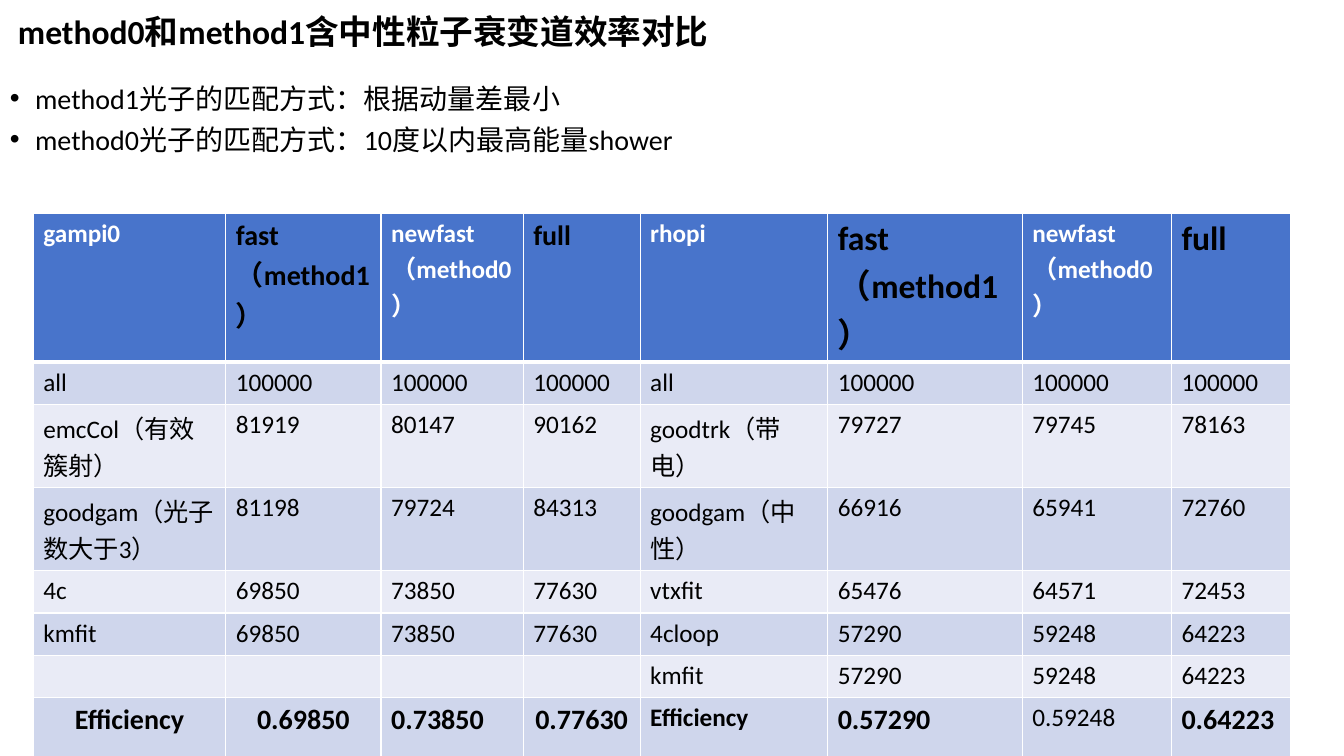
import pptx
import pptx.dml.color
import pptx.enum.text
import pptx.oxml
import pptx.oxml.ns
import pptx.util

PX = 9144  # EMU per px, 100 px to the inch
LEFT = pptx.enum.text.PP_ALIGN.LEFT
MID = pptx.enum.text.PP_ALIGN.CENTER
BLUE, DARK, PALE = "4874CB", "CFD6EC", "E9EBF6"
WHITE, BLACK = "FFFFFF", "000000"

COLS = [191, 154, 141, 116, 186, 193, 148, 118]
HEADS = ["gampi0", "fast（method1）", "newfast（method0）", "full",
         "rhopi", "fast（method1）", "newfast（method0）", "full"]
CUTS = [
    ["all", "100000", "100000", "100000", "all", "100000", "100000", "100000"],
    ["emcCol（有效簇射）", "81919", "80147", "90162",
     "goodtrk（带电）", "79727", "79745", "78163"],
    ["goodgam（光子数大于3）", "81198", "79724", "84313",
     "goodgam（中性）", "66916", "65941", "72760"],
    ["4c", "69850", "73850", "77630", "vtxfit", "65476", "64571", "72453"],
    ["kmfit", "69850", "73850", "77630", "4cloop", "57290", "59248", "64223"],
    ["", "", "", "", "kmfit", "57290", "59248", "64223"],
]
RATES = ["Efficiency", "0.69850", "0.73850", "0.77630",
         "Efficiency", "0.57290", "0.59248", "0.64223"]
NOTES = ["method1光子的匹配方式：根据动量差最小",
         "method0光子的匹配方式：10度以内最高能量shower"]


def px(num):
    return pptx.util.Emu(num * PX)


def color(code):
    return pptx.dml.color.RGBColor.from_string(code)


def write(para, text, size=18, bold=False, ink=BLACK, align=LEFT):
    para.alignment = align
    run = para.add_run()
    run.text = text
    font = run.font
    font.name, font.size, font.bold = "Calibri", pptx.util.Pt(size), bold
    font.color.rgb = color(ink)


def node(xml):
    """Parse an XML snippet whose first tag is in the a: namespace."""
    tag, rest = xml.split(" ", 1)
    return pptx.oxml.parse_xml(f"{tag} {pptx.oxml.ns.nsdecls('a')} {rest}")


def edge(cell, base):
    """Draw white cell borders, the bottom one base points wide."""
    props = cell._tc.get_or_add_tcPr()
    for spot, (side, wide) in enumerate(
            [("L", 1), ("R", 1), ("T", 1), ("B", base)]):
        props.insert(spot, node(
            f'<a:ln{side} w="{pptx.util.Pt(wide)}"><a:solidFill>'
            f'<a:srgbClr val="{WHITE}"/></a:solidFill></a:ln{side}>'))


def dot(para):
    """Give the paragraph a hanging bullet."""
    props = para._p.get_or_add_pPr()
    props.set("marL", str(px(25)))
    props.set("indent", str(px(-25)))
    props.append(node('<a:buFont typeface="Arial"/>'))
    props.append(node('<a:buChar char="•"/>'))


class Page:
    def __init__(self, deck):
        self.slide = deck.slides.add_slide(deck.slide_layouts[6])

    def frame(self, *box):
        shape = self.slide.shapes.add_textbox(*map(px, box))
        shape.text_frame.word_wrap = True
        return shape.text_frame

    def title(self, text, *box):
        write(self.frame(*box).paragraphs[0], text, size=24, bold=True)

    def list(self, lines, *box):
        frame = self.frame(*box)
        for spot, line in enumerate(lines):
            para = frame.add_paragraph() if spot else frame.paragraphs[0]
            para.line_spacing = 0.8
            para.space_before = pptx.util.Pt(10)
            write(para, line, size=20)
            dot(para)

    def table(self, rows, looks, cols, highs, left, top):
        """Fill a table; looks maps (row, column) to a text format."""
        grid = self.slide.shapes.add_table(
            len(rows), len(cols), px(left), px(top),
            px(sum(cols)), px(sum(highs))).table
        for col, wide in zip(grid.columns, cols):
            col.width = px(wide)
        for r, (row, high) in enumerate(zip(rows, highs)):
            grid.rows[r].height = px(high)
            for c, text in enumerate(row):
                cell = grid.cell(r, c)
                cell.fill.solid()
                tone = BLUE if r == 0 else DARK if r % 2 else PALE
                cell.fill.fore_color.rgb = color(tone)
                edge(cell, 3 if r == 0 else 1)
                if text:
                    write(cell.text_frame.paragraphs[0], text,
                          **looks.get((r, c), {}))


def main():
    deck = pptx.Presentation()
    deck.slide_width, deck.slide_height = px(1333), px(750)
    page = Page(deck)

    rows = [HEADS, *CUTS, RATES]
    last = len(rows) - 1
    looks = {(0, c): dict(bold=True, ink=WHITE) for c in (0, 2, 4, 6)}
    for c, size in [(1, 20), (3, 20), (5, 24), (7, 24)]:
        looks[0, c] = dict(bold=True, size=size)
    for c in (0, 1, 3):
        looks[last, c] = dict(bold=True, size=20, align=MID)
    for c in (2, 5, 7):
        looks[last, c] = dict(bold=True, size=20)
    looks[last, 4] = dict(bold=True)

    page.table(rows, looks, COLS, [99] + [42] * 6 + [60], 33, 212)
    page.title("method0和method1含中性粒子衰变道效率对比", 8, 6, 1020, 82)
    page.list(NOTES, 0, 82, 1212, 87)
    deck.save("out.pptx")


if __name__ == "__main__":
    main()
